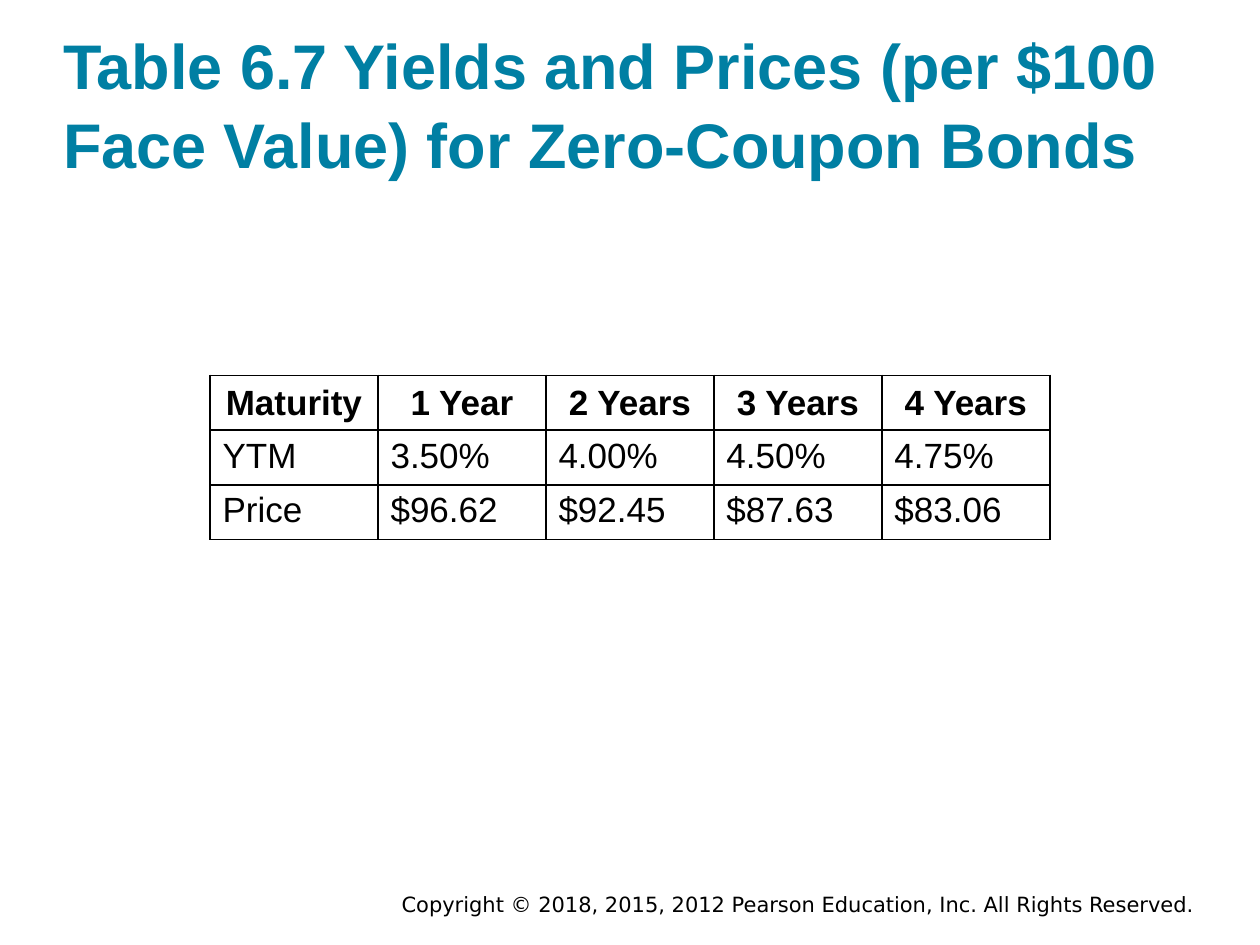
from lxml import etree
from pptx import Presentation, util as u
from pptx.dml.color import RGBColor
from pptx.enum import text
from pptx.oxml import ns

TEAL = RGBColor(0x00, 0x7F, 0xA3)
BLACK = RGBColor(0x00, 0x00, 0x00)
WHITE = RGBColor(0xFF, 0xFF, 0xFF)
WIDTH, HEIGHT = u.Inches(10), u.Inches(7.5)
YIELDS = [
    ["Maturity", "1 Year", "2 Years", "3 Years", "4 Years"],
    ["YTM", "3.50%", "4.00%", "4.50%", "4.75%"],
    ["Price", "$96.62", "$92.45", "$87.63", "$83.06"],
]


def style(paragraph, size, color=BLACK, bold=False, face="Arial"):
    for run in paragraph.runs:
        run.font.name, run.font.size = face, u.Pt(size)
        run.font.bold, run.font.color.rgb = bold, color


def set_title(slide, wording):
    title = slide.shapes.title
    title.left, title.top = int(WIDTH * 0.05), u.Inches(0.24)
    title.width, title.height = int(WIDTH * 0.9), u.Inches(1.2)
    frame = title.text_frame
    frame.text = wording
    frame.word_wrap = True
    frame.auto_size = text.MSO_AUTO_SIZE.NONE
    frame.vertical_anchor = text.MSO_ANCHOR.BOTTOM
    frame.margin_left = frame.margin_right = 0
    frame.margin_top = frame.margin_bottom = 0
    heading = frame.paragraphs[0]
    heading.alignment = text.PP_ALIGN.LEFT
    heading.line_spacing = 1.05
    style(heading, 36, TEAL, bold=True)


def add_borders(cell):
    """Draw a 1 pt black line on all sides; must precede the cell's fill."""
    properties = cell._tc.get_or_add_tcPr()
    for side in ("lnL", "lnR", "lnT", "lnB"):
        line = etree.SubElement(properties, ns.qn(f"a:{side}"), w=str(u.Pt(1)))
        paint = etree.SubElement(line, ns.qn("a:solidFill"))
        etree.SubElement(paint, ns.qn("a:srgbClr"), val=str(BLACK))


def fill_cell(cell, wording, is_header):
    add_borders(cell)
    cell.fill.solid()
    cell.fill.fore_color.rgb = WHITE
    cell.text = wording
    entry = cell.text_frame.paragraphs[0]
    if is_header:
        cell.vertical_anchor = text.MSO_ANCHOR.MIDDLE
        entry.alignment = text.PP_ALIGN.CENTER
    style(entry, 20, bold=is_header)


def add_yield_table(slide, rows):
    """Centre the table across the slide, two thirds of its width."""
    width, row_height = WIDTH * 2 // 3, u.Inches(0.41)
    table = slide.shapes.add_table(
        len(rows), len(rows[0]), (WIDTH - width) // 2, u.Inches(2.98),
        width, row_height * len(rows)).table
    for r, row in enumerate(rows):
        table.rows[r].height = row_height
        for c, wording in enumerate(row):
            fill_cell(table.cell(r, c), wording, is_header=r == 0)


def add_copyright(slide, wording):
    box = slide.shapes.add_textbox(
        u.Inches(1.75), u.Inches(7.03), u.Inches(7.83), u.Inches(0.3))
    box.text_frame.word_wrap = True
    box.text_frame.text = wording
    notice = box.text_frame.paragraphs[0]
    notice.alignment = text.PP_ALIGN.RIGHT
    style(notice, 12, face="DejaVu Sans")


def main():
    deck = Presentation()
    deck.slide_width, deck.slide_height = WIDTH, HEIGHT
    slide = deck.slides.add_slide(deck.slide_layouts.get_by_name("Title Only"))
    add_copyright(slide, "Copyright © 2018, 2015, 2012 Pearson Education, Inc. "
                         "All Rights Reserved.")
    set_title(slide, "Table 6.7 Yields and Prices (per $100 Face Value) "
                     "for Zero-Coupon Bonds")
    add_yield_table(slide, YIELDS)
    deck.save("out.pptx")


if __name__ == "__main__":
    main()
